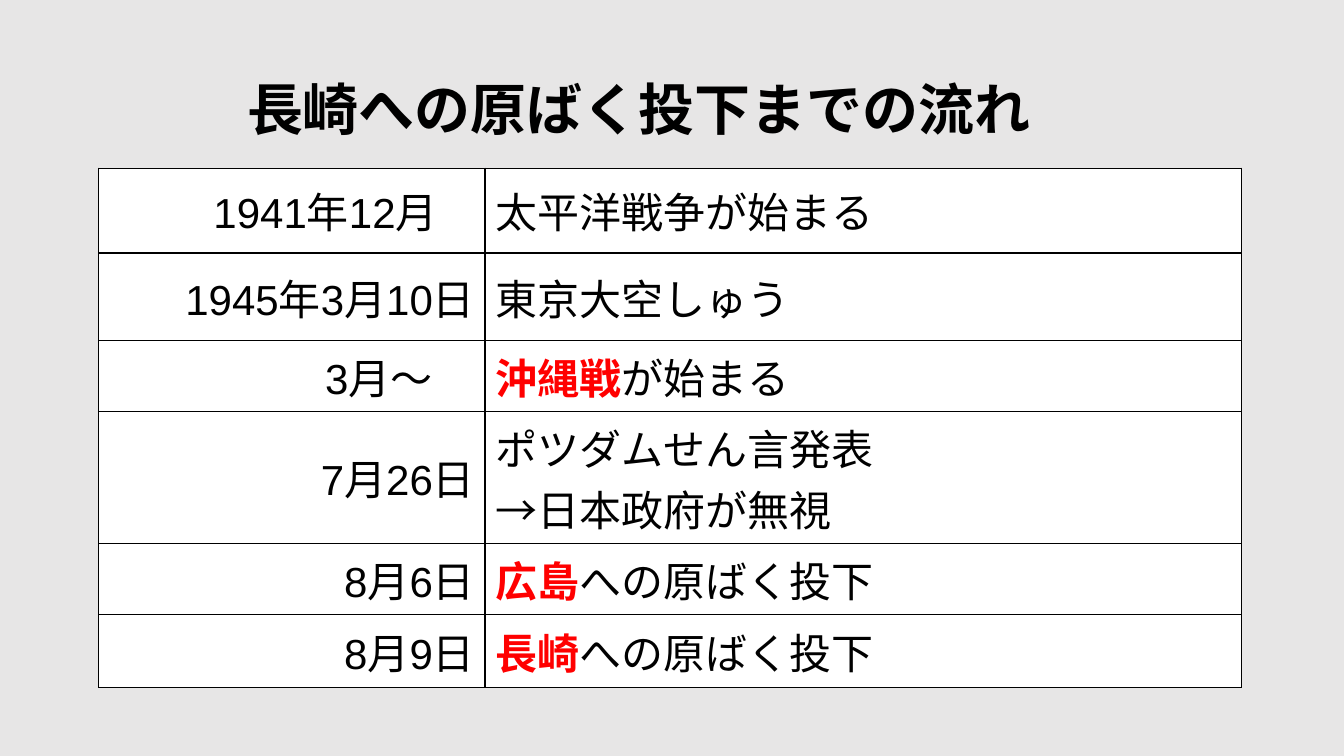
from lxml.etree import SubElement
from pptx import Presentation
from pptx.dml.color import RGBColor
from pptx.enum.text import MSO_ANCHOR, PP_ALIGN
from pptx.oxml.ns import qn
from pptx.util import Inches, Pt


def add_run(paragraph, text, size, color="000000", bold=False):
    run = paragraph.add_run()
    run.text = text
    run.font.name = "Arial"
    run.font.size = Pt(size)
    run.font.bold = bold
    run.font.color.rgb = RGBColor.from_string(color)


def style_cell(cell):
    cell.fill.solid()
    cell.fill.fore_color.rgb = RGBColor.from_string("FFFFFF")
    cell.vertical_anchor = MSO_ANCHOR.MIDDLE
    # Borders come before the fill in the cell properties
    properties = cell._tc.get_or_add_tcPr()
    for position, side in enumerate(("a:lnL", "a:lnR", "a:lnT", "a:lnB")):
        border = SubElement(properties, qn(side), w=str(Pt(1)))
        solid = SubElement(border, qn("a:solidFill"))
        SubElement(solid, qn("a:srgbClr"), val="000000")
        properties.insert(position, border)


# Date, right margin, row height, event lines as (highlight, rest)
EVENTS = [
    ("1941年12月", 0.47, 0.84, [("", "太平洋戦争が始まる")]),
    ("1945年3月10日", 0.1, 0.87, [("", "東京大空しゅう")]),
    ("3月〜", 0.52, 0.7, [("沖縄戦", "が始まる")]),
    ("7月26日", 0.1, 1.31, [("", "ポツダムせん言発表"), ("", "→日本政府が無視")]),
    ("8月6日", 0.1, 0.7, [("広島", "への原ばく投下")]),
    ("8月9日", 0.1, 0.72, [("長崎", "への原ばく投下")]),
]

prs = Presentation()
prs.slide_width, prs.slide_height = Inches(13.33), Inches(7.5)
slide = prs.slides.add_slide(prs.slide_layouts[5])
slide.background.fill.solid()
slide.background.fill.fore_color.rgb = RGBColor.from_string("E7E6E6")

# Title
title = slide.shapes.title
title.left, title.top = Inches(2.35), Inches(0.69)
title.width, title.height = Inches(8.64), Inches(0.77)
title.text_frame.vertical_anchor = MSO_ANCHOR.TOP
heading = title.text_frame.paragraphs[0]
heading.alignment = PP_ALIGN.LEFT
add_run(heading, "長崎への原ばく投下までの流れ", 40, bold=True)

# Timeline table
total_height = sum(height for _, _, height, _ in EVENTS)
timeline = slide.shapes.add_table(
    len(EVENTS), 2, Inches(0.98), Inches(1.67), Inches(11.33), Inches(total_height)
).table
timeline.first_row = False
timeline.horz_banding = False
timeline.columns[0].width = Inches(3.83)
timeline.columns[1].width = Inches(7.5)

for row, (date, margin, height, lines) in enumerate(EVENTS):
    timeline.rows[row].height = Inches(height)
    date_cell, event_cell = timeline.cell(row, 0), timeline.cell(row, 1)
    style_cell(date_cell)
    style_cell(event_cell)

    # Date
    date_cell.margin_right = Inches(margin)
    date_line = date_cell.text_frame.paragraphs[0]
    date_line.alignment = PP_ALIGN.RIGHT
    add_run(date_line, date, 30)

    # Event
    event_text = event_cell.text_frame
    for index, (highlight, rest) in enumerate(lines):
        event_line = event_text.add_paragraph() if index else event_text.paragraphs[0]
        if highlight:
            add_run(event_line, highlight, 30, "FF0000", True)
        add_run(event_line, rest, 30)

prs.save("out.pptx")
